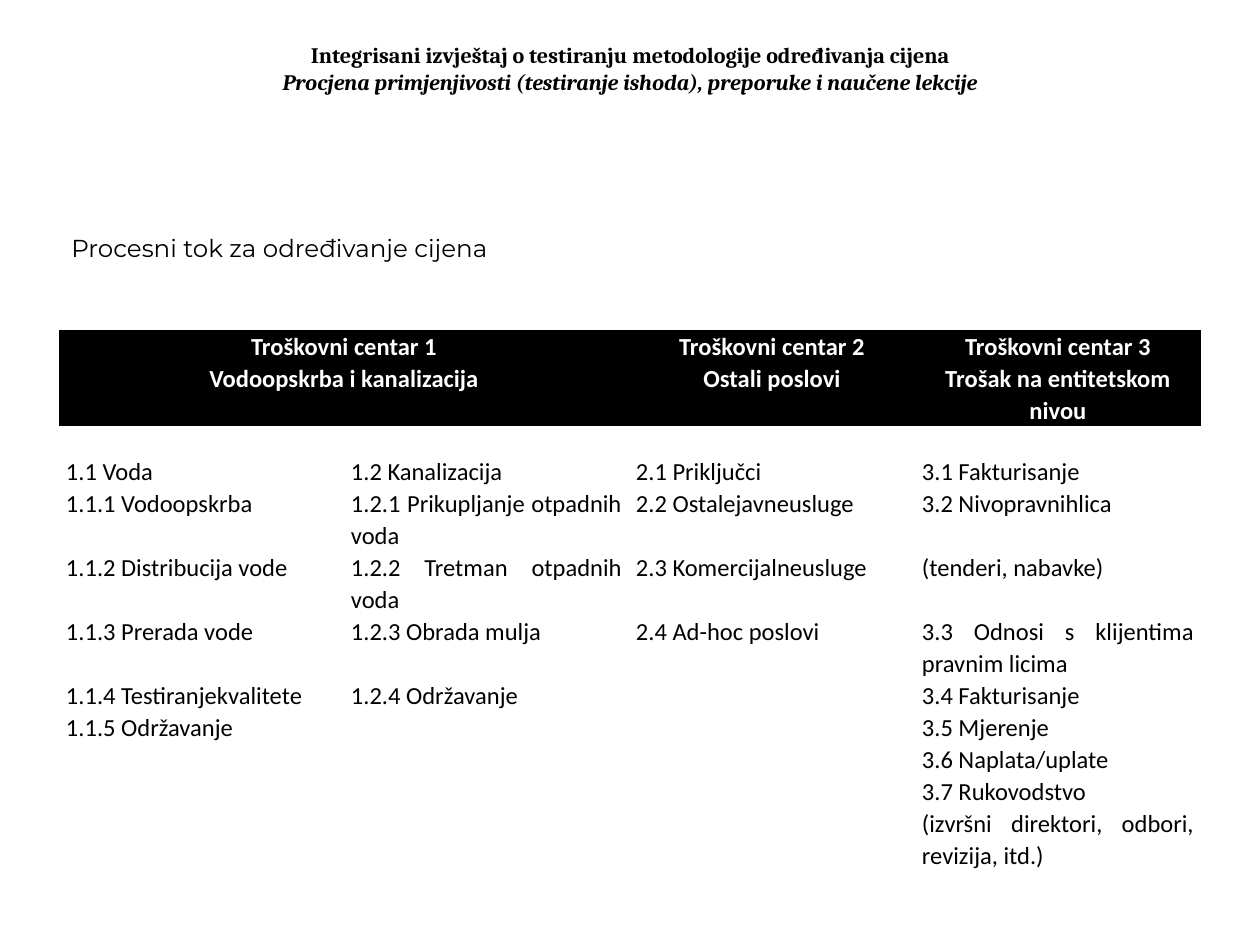
import pptx
import pptx.util
import pptx.dml.color
import pptx.enum.text
import lxml.etree

TITLE = "Integrisani izvještaj o testiranju metodologije određivanja cijena"
SUBTITLE = "Procjena primjenjivosti (testiranje ishoda), preporuke i naučene lekcije"
HEADING = "Procesni tok za određivanje cijena"

HEADER_ROWS = 2
LINE = 32
# (height in px, cell texts); the first header cell spans two columns
ROWS = [
    (LINE, ["Troškovni centar 1", "", "Troškovni centar 2", "Troškovni centar 3"]),
    (2 * LINE, ["Vodoopskrba i kanalizacija", "", "Ostali poslovi", "Trošak na entitetskom nivou"]),
    (29, ["", "", "", ""]),
    (LINE, ["1.1 Voda", "1.2 Kanalizacija", "2.1 Priključci", "3.1 Fakturisanje"]),
    (2 * LINE, ["1.1.1 Vodoopskrba", "1.2.1 Prikupljanje otpadnih voda",
                "2.2 Ostalejavneusluge", "3.2 Nivopravnihlica"]),
    (2 * LINE, ["1.1.2 Distribucija vode", "1.2.2 Tretman otpadnih voda",
                "2.3 Komercijalneusluge", "(tenderi, nabavke)"]),
    (2 * LINE, ["1.1.3 Prerada vode", "1.2.3 Obrada mulja",
                "2.4 Ad-hoc poslovi", "3.3 Odnosi s klijentima pravnim licima"]),
    (LINE, ["1.1.4 Testiranjekvalitete", "1.2.4 Održavanje", "", "3.4 Fakturisanje"]),
    (LINE, ["1.1.5 Održavanje", "", "", "3.5 Mjerenje"]),
    (LINE, ["", "", "", "3.6 Naplata/uplate"]),
    (LINE, ["", "", "", "3.7 Rukovodstvo"]),
    (2 * LINE, ["", "", "", "(izvršni direktori, odbori, revizija, itd.)"]),
]
COLUMNS = [285, 285, 286, 286]

COLORS = {"text": "000000", "header": "000000", "header text": "FFFFFF"}
PLAIN_TABLE = "{2D5ABB26-0587-4C30-8999-92F81FD0307C}"
ALIGN = pptx.enum.text.PP_ALIGN


def px(value):
    return pptx.util.Emu(value * 914400 // 126)


def color(name):
    return pptx.dml.color.RGBColor.from_string(COLORS[name])


def add_text(para, text, *, font="Calibri", size=14, fill="text", bold=False,
             italic=False, align=ALIGN.LEFT, spacing=None):
    para.alignment = align
    if spacing:
        para.line_spacing = spacing
    span = para.add_run()
    span.text = text
    span.font.name = font
    span.font.size = pptx.util.Pt(size)
    span.font.bold = bold
    span.font.italic = italic
    span.font.color.rgb = color(fill)


def shrink_empty(para):
    """Keep an empty cell from stretching its row."""
    end = lxml.etree.SubElement(para._p, pptx.oxml.ns.qn("a:endParaRPr"))
    end.set("sz", "1000")


def add_box(page, left, top, width, height, anchor):
    box = page.shapes.add_textbox(px(left), px(top), px(width), px(height))
    box.text_frame.word_wrap = True
    box.text_frame.vertical_anchor = anchor
    return box.text_frame.paragraphs[0]


def fill_cell(cell, text, header):
    cell.margin_left = cell.margin_right = px(7)
    cell.margin_top = cell.margin_bottom = 0
    if header:
        cell.fill.solid()
        cell.fill.fore_color.rgb = color("header")
    else:
        cell.fill.background()
    para = cell.text_frame.paragraphs[0]
    if text:
        add_text(para, text, bold=header, spacing=1.07,
                 fill="header text" if header else "text",
                 align=ALIGN.CENTER if header else ALIGN.JUSTIFY)
    else:
        shrink_empty(para)


def add_cost_table(page):
    heights = [height for height, _ in ROWS]
    frame = page.shapes.add_table(len(ROWS), len(COLUMNS), px(59), px(330),
                                  px(sum(COLUMNS)), px(sum(heights)))
    table = frame.table
    table.first_row = table.horz_banding = False
    table._tbl.tblPr.find(pptx.oxml.ns.qn("a:tableStyleId")).text = PLAIN_TABLE
    for column, width in zip(table.columns, COLUMNS):
        column.width = px(width)
    for index, (height, texts) in enumerate(ROWS):
        table.rows[index].height = px(height)
        header = index < HEADER_ROWS
        for position, text in enumerate(texts):
            fill_cell(table.cell(index, position), text, header)
        if header:
            table.cell(index, 0).merge(table.cell(index, 1))


def main():
    deck = pptx.Presentation()
    deck.slide_width, deck.slide_height = px(1260), px(945)
    page = deck.slides.add_slide(deck.slide_layouts[6])

    title = add_box(page, 63, 38, 1134, 60, pptx.enum.text.MSO_ANCHOR.MIDDLE)
    style = dict(font="Cambria", size=12.6, bold=True, align=ALIGN.CENTER)
    add_text(title, TITLE, **style)
    title.add_line_break()
    add_text(title, SUBTITLE, italic=True, **style)

    heading = add_box(page, 59, 227, 1131, 650, pptx.enum.text.MSO_ANCHOR.TOP)
    add_text(heading, HEADING, font="Montserrat")

    add_cost_table(page)
    deck.save("out.pptx")


if __name__ == "__main__":
    main()
